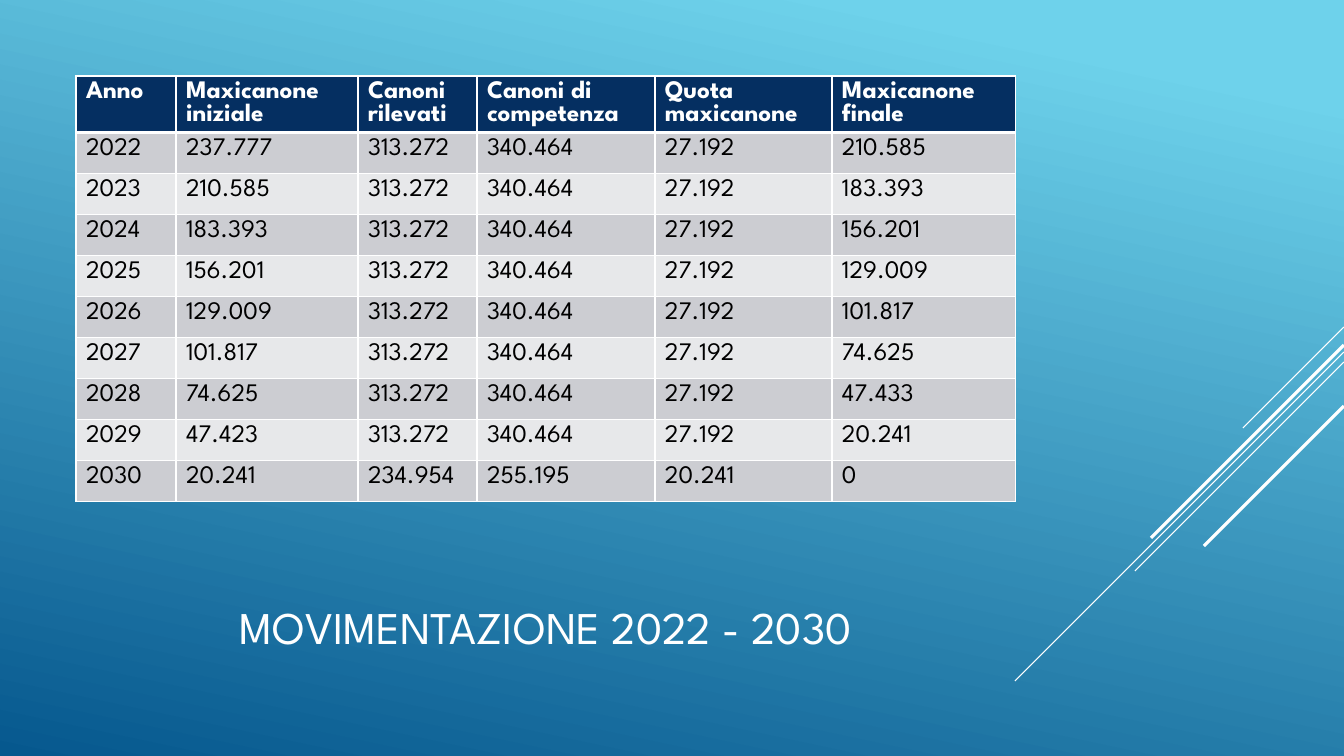
from lxml import etree
from pptx import Presentation
from pptx import util as u
from pptx.dml.color import RGBColor
from pptx.enum import shapes, text
from pptx.oxml import ns

EMU_PER_PX = 914400 / 100.8
WIDTH, HEIGHT = 1344, 756
FONT = "League Spartan"
WHITE, BLACK, NAVY = "FFFFFF", "000000", "052F61"
BANDS = ("CCCDD2", "E7E8EA")

HEADINGS = ("Anno", "Maxicanone iniziale", "Canoni rilevati",
            "Canoni di competenza", "Quota maxicanone", "Maxicanone finale")
COLUMN_WIDTHS = (100, 182, 119, 178, 177, 184)
HEADER_HEIGHT, ROW_HEIGHT = 56, 41

FULL_YEAR = ("313.272", "340.464", "27.192")
LAST_YEAR = ("234.954", "255.195", "20.241")
# Year, opening balance, yearly amounts, closing balance
MOVEMENTS = (
    ("2022", "237.777", *FULL_YEAR, "210.585"),
    ("2023", "210.585", *FULL_YEAR, "183.393"),
    ("2024", "183.393", *FULL_YEAR, "156.201"),
    ("2025", "156.201", *FULL_YEAR, "129.009"),
    ("2026", "129.009", *FULL_YEAR, "101.817"),
    ("2027", "101.817", *FULL_YEAR, "74.625"),
    ("2028", "74.625", *FULL_YEAR, "47.433"),
    ("2029", "47.423", *FULL_YEAR, "20.241"),
    ("2030", "20.241", *LAST_YEAR, "0"),
)

# Start height on the right edge, horizontal run, line width in points
DIAGONALS = ((327, 101, 0.75), (352, 329, 0.75), (362, 209, 0.75),
             (345, 193, 2.25), (406, 140, 2.25))


def px(length):
    return u.Emu(round(length * EMU_PER_PX))


def rgb(color):
    return RGBColor.from_string(color)


def format_runs(paragraph, size, color, bold=False):
    for run in paragraph.runs:
        run.font.name = FONT
        run.font.size = u.Pt(size)
        run.font.bold = bold
        run.font.color.rgb = rgb(color)


def paint_background(slide):
    fill = slide.background.fill
    fill.gradient()
    fill.gradient_angle = 258
    for stop, (position, color) in zip(fill.gradient_stops,
                                       ((0.1, "6ED2EB"), (1, "06588E"))):
        stop.position = position
        stop.color.rgb = rgb(color)


def add_diagonal(slide, top, run, weight):
    line = slide.shapes.add_connector(
        shapes.MSO_CONNECTOR.STRAIGHT,
        px(WIDTH), px(top), px(WIDTH - run), px(top + run))
    line.line.color.rgb = rgb(WHITE)
    line.line.width = u.Pt(weight)
    etree.SubElement(line._element.spPr, ns.qn("a:effectLst"))


def set_title(slide, wording):
    title = slide.shapes.title
    title.left, title.top, title.width, title.height = map(px, (76, 593, 940, 67))
    frame = title.text_frame
    frame.text = wording
    frame.word_wrap = True
    frame.auto_size = text.MSO_AUTO_SIZE.NONE
    frame.vertical_anchor = text.MSO_ANCHOR.MIDDLE
    frame.paragraphs[0].alignment = text.PP_ALIGN.CENTER
    format_runs(frame.paragraphs[0], 32.4, WHITE)


def set_borders(cell, top, bottom):
    properties = cell._tc.get_or_add_tcPr()
    sides = (("lnL", 1), ("lnR", 1), ("lnT", top), ("lnB", bottom))
    for index, (side, weight) in enumerate(sides):
        border = etree.Element(ns.qn(f"a:{side}"), w=str(u.Pt(weight)))
        fill = etree.SubElement(border, ns.qn("a:solidFill"))
        etree.SubElement(fill, ns.qn("a:srgbClr"), val=WHITE)
        properties.insert(index, border)


def fill_cell(cell, wording, row):
    header = row == 0
    cell.text = wording
    format_runs(cell.text_frame.paragraphs[0], 18,
                WHITE if header else BLACK, header)
    cell.fill.solid()
    cell.fill.fore_color.rgb = rgb(NAVY if header else BANDS[(row - 1) % 2])
    set_borders(cell, 3 if row == 1 else 1, 3 if header else 1)


def add_movements(slide):
    rows = (HEADINGS, *MOVEMENTS)
    height = HEADER_HEIGHT + ROW_HEIGHT * len(MOVEMENTS)
    table = slide.shapes.add_table(
        len(rows), len(HEADINGS), px(76), px(76),
        px(sum(COLUMN_WIDTHS)), px(height)).table
    for column, width in zip(table.columns, COLUMN_WIDTHS):
        column.width = px(width)
    for row, values in enumerate(rows):
        table.rows[row].height = px(ROW_HEIGHT if row else HEADER_HEIGHT)
        for column, value in enumerate(values):
            fill_cell(table.cell(row, column), value, row)


def main():
    deck = Presentation()
    deck.slide_width, deck.slide_height = px(WIDTH), px(HEIGHT)
    slide = deck.slides.add_slide(deck.slide_layouts[5])

    # Backdrop
    paint_background(slide)
    for diagonal in DIAGONALS:
        add_diagonal(slide, *diagonal)

    # Content
    set_title(slide, "MOVIMENTAZIONE 2022 - 2030")
    add_movements(slide)
    deck.save("out.pptx")


if __name__ == "__main__":
    main()
